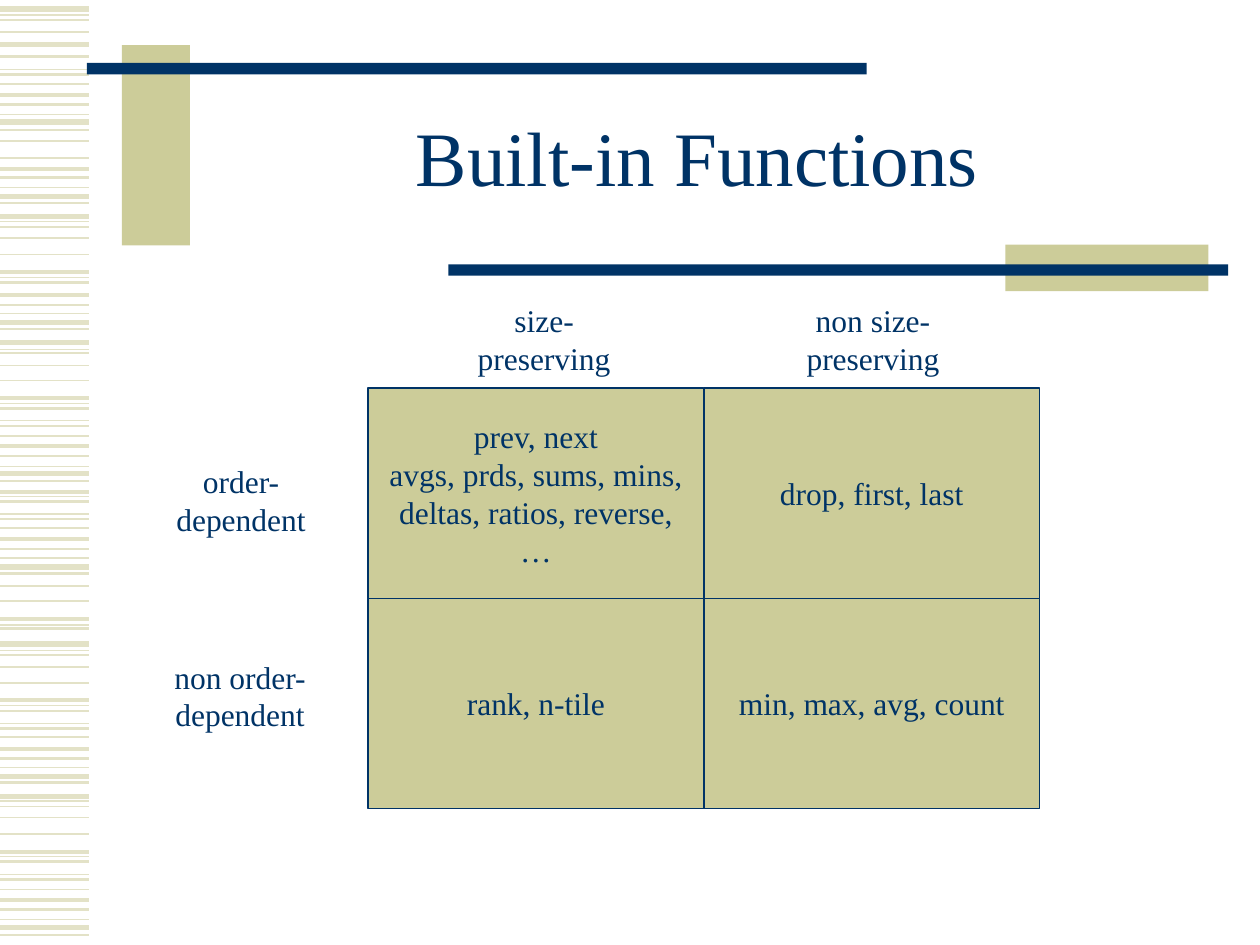
import pptx
import pptx.util
import pptx.dml.color
import pptx.enum.shapes
import pptx.enum.text
import pptx.oxml
import pptx.oxml.ns

Cm, Pt = pptx.util.Cm, pptx.util.Pt
COLORS = {"navy": "003366", "khaki": "CCCC99", "stripe": "E3E2C7"}
FONT = "Times New Roman"

# Heights of the margin stripes in cm, by line weight in points
STRIPES = {
    3: [0.18, 0.89, 2.46, 3.96, 4.37, 6.5, 6.91, 9.55, 11.43, 12.98, 15.65,
        16.05, 18.69],
    2.25: [1.91, 3.4, 5.49, 5.94, 8.03, 8.99, 9.91, 10.87, 12.47, 14.12,
           15.09, 17.17, 18.14],
    1.5: [1.14, 1.5, 2.11, 2.62, 3.58, 4.09, 5.69, 6.15, 6.63, 8.23, 8.59,
          9.19, 9.7, 10.11, 10.46, 11.07, 11.56, 12.67, 14.33, 14.68, 15.29,
          15.77, 17.37, 17.73, 18.34, 18.85],
    1: [0.41, 0.64, 1.7, 2.84, 3.18, 4.57, 4.8, 5.13, 7.11, 7.37, 7.67, 8.79,
        10.64, 11.81, 12.12, 13.21, 13.44, 13.77, 14.86, 16.26, 16.48, 16.81,
        17.93],
    0.75: [0.3, 1.4, 2.31, 3.78, 4.47, 5.59, 6.32, 7.04, 8.13, 8.48, 9.4,
           10.01, 10.36, 11.25, 12.6, 13.11, 14.22, 14.58, 15.47, 16.15,
           17.27, 17.63, 18.54],
}

# Functions by row (order dependence) and column (size preservation)
FUNCTIONS = [
    ["prev, next\navgs, prds, sums, mins,\vdeltas, ratios, reverse,\n…",
     "drop, first, last"],
    ["rank, n-tile", "min, max, avg, count"],
]


def color(name):
    return pptx.dml.color.RGBColor.from_string(COLORS[name])


def write(shape, text, size, spacing=None, wrap=False):
    frame = shape.text_frame
    frame.text = text
    frame.word_wrap = wrap
    frame.vertical_anchor = pptx.enum.text.MSO_ANCHOR.MIDDLE
    for para in frame.paragraphs:
        para.alignment = pptx.enum.text.PP_ALIGN.CENTER
        para.line_spacing = spacing
        for span in para.runs:
            span.font.name = FONT
            span.font.size = Pt(size)
            span.font.color.rgb = color("navy")


def add_block(slide, left, top, width, height, fill, outline=None):
    block = slide.shapes.add_shape(
        pptx.enum.shapes.MSO_SHAPE.RECTANGLE,
        Cm(left), Cm(top), Cm(width), Cm(height))
    block.shadow.inherit = False
    block.fill.solid()
    block.fill.fore_color.rgb = color(fill)
    if outline:
        block.line.color.rgb = color(outline)
        block.line.width = Pt(0.75)
    else:
        block.line.fill.background()
    return block


def add_label(slide, center, top, width, text):
    label = slide.shapes.add_textbox(
        Cm(center - width / 2), Cm(top), Cm(width), Cm(1.78))
    write(label, text, 18)


def add_stripes(slide, left, top, width):
    for weight, heights in STRIPES.items():
        for height in heights:
            y = Cm(top + height)
            stripe = slide.shapes.add_connector(
                pptx.enum.shapes.MSO_CONNECTOR.STRAIGHT,
                Cm(left), y, Cm(left + width), y)
            stripe.line.color.rgb = color("stripe")
            stripe.line.width = Pt(weight)
            stripe.element.spPr.append(
                pptx.oxml.parse_xml(
                    "<a:effectLst %s/>" % pptx.oxml.ns.nsdecls("a")))


def add_header(slide, left, top):
    # Upper-left and lower-right blocks, each crossed by a bar
    add_block(slide, left + 0.71, top, 1.37, 4.04, "khaki")
    add_block(slide, left, top + 0.36, 15.72, 0.23, "navy")
    add_block(slide, left + 18.52, top + 4.02, 4.09, 0.94, "khaki")
    add_block(slide, left + 7.29, top + 4.42, 15.72, 0.23, "navy")

    # Title
    title = slide.shapes.title
    title.left, title.top = Cm(left + 2.06), Cm(top + 0.79)
    title.width, title.height = Cm(20.5), Cm(3.18)
    write(title, "Built-in Functions", 44, spacing=0.85, wrap=True)


def add_matrix(slide, left, top, width, height):
    cell_width, cell_height = width / 2, height / 2
    for row, texts in enumerate(FUNCTIONS):
        for column, text in enumerate(texts):
            cell = add_block(slide, left + column * cell_width,
                             top + row * cell_height, cell_width, cell_height,
                             "khaki", "navy")
            write(cell, text, 18)

    # Column labels above, row labels to the left
    add_label(slide, left + 3.55, top - 1.88, 3.2, "size-\vpreserving")
    add_label(slide, left + 10.18, top - 1.88, 3.2, "non size-\vpreserving")
    add_label(slide, left - 2.56, top + 1.37, 3.12, "order-\vdependent")
    add_label(slide, left - 2.58, top + 5.31, 3.18, "non order-\vdependent")


def main():
    deck = pptx.Presentation()
    deck.slide_width, deck.slide_height = Cm(25.4), Cm(19.05)
    slide = deck.slides.add_slide(deck.slide_layouts[5])
    add_stripes(slide, 0, 0, 1.8)
    add_header(slide, 1.75, 0.91)
    add_matrix(slide, 7.42, 7.82, 13.54, 8.48)
    deck.save("out.pptx")


if __name__ == "__main__":
    main()
